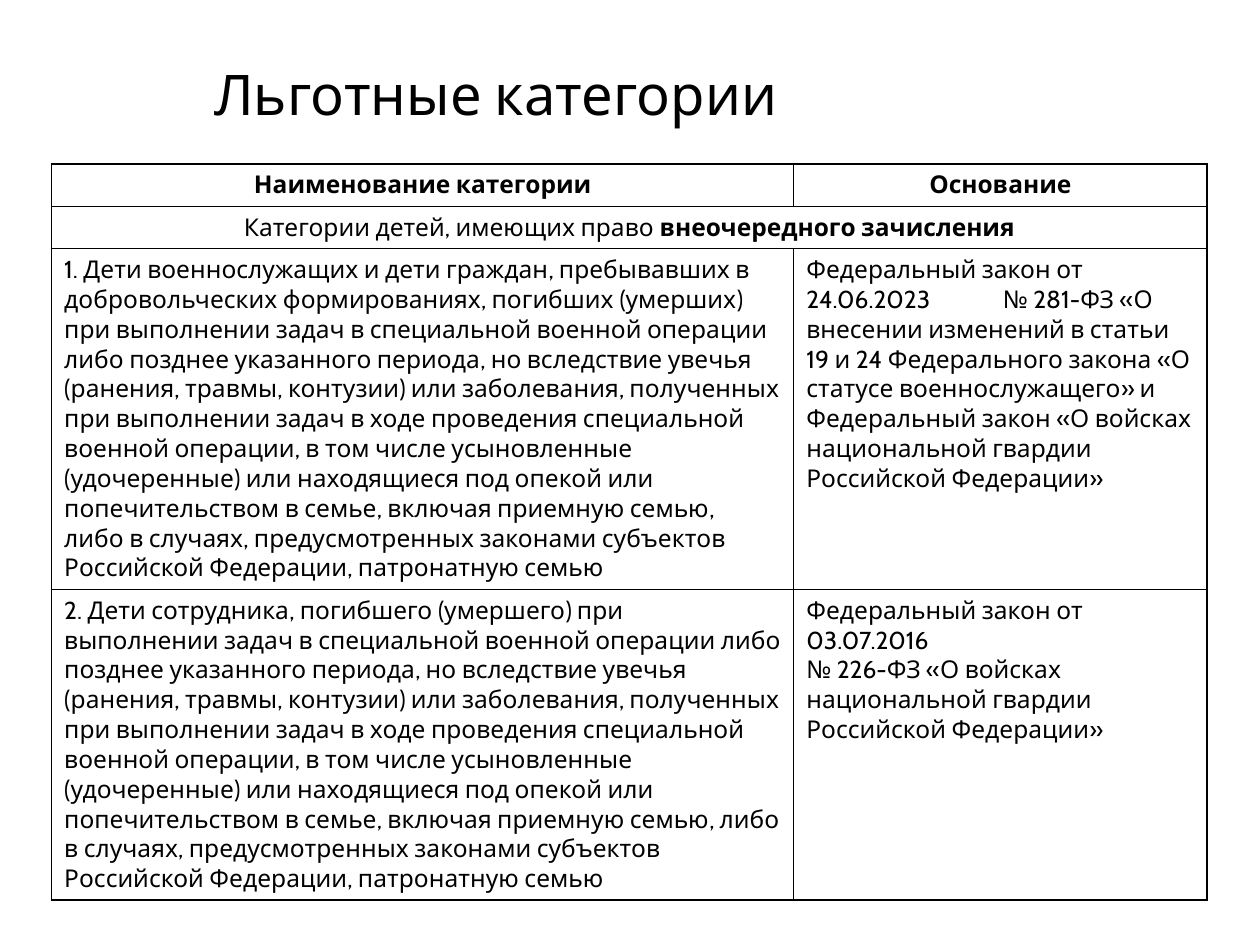
from pptx import Presentation
from pptx.dml.color import RGBColor
from pptx.enum.text import MSO_ANCHOR, PP_ALIGN
from pptx.oxml import parse_xml
from pptx.oxml.ns import nsdecls
from pptx.util import Inches, Pt

LEFT, CENTER = PP_ALIGN.LEFT, PP_ALIGN.CENTER
TOP, MIDDLE = MSO_ANCHOR.TOP, MSO_ANCHOR.MIDDLE
COLORS = {"ink": "000000", "page": "FFFFFF"}
COLS = (5.89, 3.28)
ROWS = (0.33, 0.33, 2.67, 2.43)
COMMON = (
    "при выполнении задач в специальной военной операции либо позднее "
    "указанного периода, но вследствие увечья (ранения, травмы, контузии) "
    "или заболевания, полученных при выполнении задач в ходе проведения "
    "специальной военной операции, в том числе усыновленные (удочеренные) "
    "или находящиеся под опекой или попечительством в семье, включая "
    "приемную семью,"
)
ENDING = "либо в случаях, предусмотренных законами субъектов Российской Федерации, патронатную семью"
GUARD = "войсках национальной гвардии Российской Федерации»"
HEADS = ("Наименование категории", "Основание")
GROUP = (("Категории детей, имеющих право ", False), ("внеочередного зачисления", True))
BODY = (
    (
        "1. Дети военнослужащих и дети граждан, пребывавших в добровольческих "
        f"формированиях, погибших (умерших) {COMMON}\v{ENDING}",
        "Федеральный закон от 24.06.2023\t№ 281-ФЗ «О внесении изменений в статьи "
        "19 и 24 Федерального закона «О статусе военнослужащего» и "
        f"Федеральный закон «О {GUARD}",
    ),
    (
        f"2. Дети сотрудника, погибшего (умершего) {COMMON} {ENDING}",
        f"Федеральный закон от 03.07.2016\v№ 226-ФЗ «О {GUARD}",
    ),
)


class Deck:
    """Hold the style and the current slide."""

    font = "Cabin"
    size = 14

    def __init__(self):
        self.prs = Presentation()
        self.prs.slide_width, self.prs.slide_height = Inches(10), Inches(7.5)
        self.slide = self.prs.slides.add_slide(self.prs.slide_layouts[5])
        fill = self.slide.background.fill
        fill.solid()
        fill.fore_color.rgb = RGBColor.from_string(COLORS["page"])

    def style(self, run, size, bold=False):
        font = run.font
        font.name, font.size, font.bold = self.font, Pt(size), bold
        font.color.rgb = RGBColor.from_string(COLORS["ink"])

    def title(self, text, left, top, width, height):
        shape = self.slide.shapes.title
        shape.left, shape.top = Inches(left), Inches(top)
        shape.width, shape.height = Inches(width), Inches(height)
        frame = shape.text_frame
        frame.text = text
        frame.word_wrap = True
        frame.vertical_anchor = MIDDLE
        para = frame.paragraphs[0]
        para.alignment = LEFT
        self.style(para.runs[0], 32)

    def table(self, left, top, cols, rows):
        frame = self.slide.shapes.add_table(
            len(rows), len(cols), Inches(left), Inches(top),
            Inches(sum(cols)), Inches(sum(rows)))
        table = frame.table
        table.first_row = table.horz_banding = False
        for col, width in zip(table.columns, cols):
            col.width = Inches(width)
        for row, height in zip(table.rows, rows):
            row.height = Inches(height)
        for cell in table.iter_cells():
            self.border(cell)
            cell.fill.background()
        return table

    def border(self, cell):
        props = cell._tc.get_or_add_tcPr()
        for side in "LRTB":
            props.append(parse_xml(
                f'<a:ln{side} {nsdecls("a")} w="{Pt(1)}"><a:solidFill>'
                f'<a:srgbClr val="{COLORS["ink"]}"/></a:solidFill></a:ln{side}>'))

    def cell(self, cell, parts, align=LEFT, tab=None):
        cell.vertical_anchor = TOP
        para = cell.text_frame.paragraphs[0]
        para.alignment = align
        if tab:
            para._p.get_or_add_pPr().append(parse_xml(
                f'<a:tabLst {nsdecls("a")}><a:tab pos="{Inches(tab)}" algn="l"/></a:tabLst>'))
        if len(parts) == 1:
            para.text = parts[0][0]
            for run in para.runs:
                self.style(run, self.size, parts[0][1])
            return
        for text, bold in parts:
            run = para.add_run()
            run.text = text
            self.style(run, self.size, bold)


def main():
    deck = Deck()
    deck.title("Льготные категории", 1.6, 0.42, 5.21, 0.64)
    table = deck.table(0.41, 1.3, COLS, ROWS)
    for col, text in enumerate(HEADS):
        deck.cell(table.cell(0, col), [(text, True)], CENTER)
    table.cell(1, 0).merge(table.cell(1, 1))
    deck.cell(table.cell(1, 0), GROUP, CENTER)
    for row, texts in enumerate(BODY, 2):
        for col, text in enumerate(texts):
            tab = 1.56 if "\t" in text else None
            deck.cell(table.cell(row, col), [(text, False)], tab=tab)
    deck.prs.save("out.pptx")


if __name__ == "__main__":
    main()
